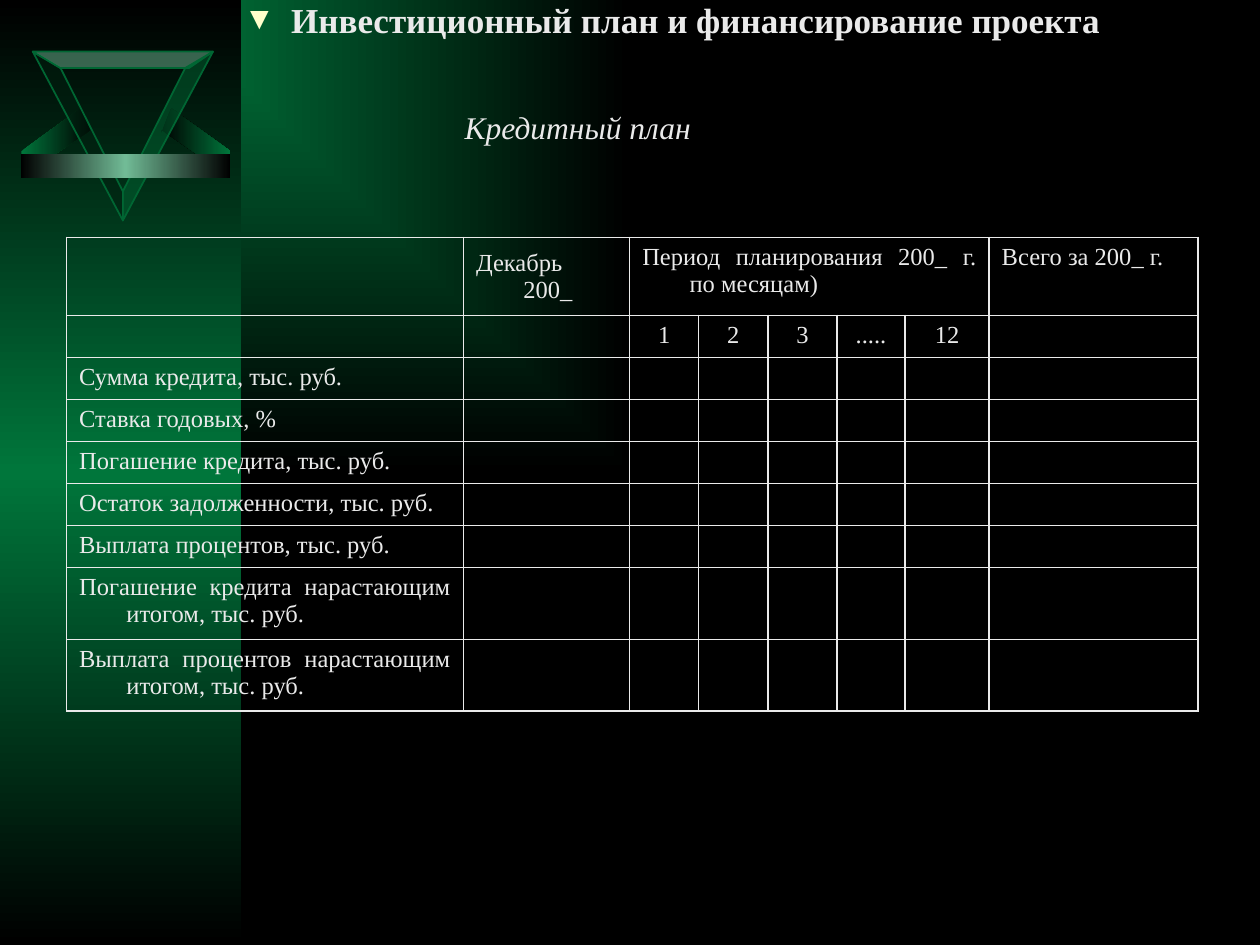
from lxml.etree import SubElement
from pptx import Presentation
from pptx.dml.color import RGBColor
from pptx.enum.shapes import MSO_SHAPE as Shape
from pptx.enum.text import MSO_ANCHOR as Anchor, MSO_AUTO_SIZE as AutoSize, PP_ALIGN as Align
from pptx.oxml.ns import qn
from pptx.util import Pt

COLORS = {
    "text": "EAEAEA", "bullet": "FFFFCC", "black": "000000", "green": "00763B",
    "edge": "006633", "deep": "002010", "mint": "71BB96",
}
HANGING = 27


def rgb(name):
    return RGBColor.from_string(COLORS[name])


def add_xml(parent, tag, **attributes):
    return SubElement(parent, qn(tag), attributes)


def mirror(points, axis):
    return [(2 * axis - x, y) for x, y in points]


class Deck:
    font_name = "Times New Roman"

    def __init__(self, width, height):
        self.deck = Presentation()
        self.deck.slide_width, self.deck.slide_height = Pt(width), Pt(height)
        self.slide = self.deck.slides.add_slide(self.deck.slide_layouts[1])
        heading = self.slide.shapes.title
        heading.element.getparent().remove(heading.element)

    def gradient(self, properties, stops, angle=None):
        solid = properties.find(qn("a:solidFill"))
        grad = add_xml(properties, "a:gradFill", rotWithShape="1")
        properties.replace(solid, grad)
        stop_list = add_xml(grad, "a:gsLst")
        for index, name in enumerate(stops):
            position = index * 100000 // (len(stops) - 1)
            stop = add_xml(stop_list, "a:gs", pos=str(position))
            add_xml(stop, "a:srgbClr", val=COLORS[name])
        if angle is None:
            corner = add_xml(grad, "a:path", path="rect")
            add_xml(corner, "a:fillToRect", r="100000", b="100000")
        else:
            add_xml(grad, "a:lin", ang=str(angle * 60000), scaled="0")

    def background(self, stops):
        self.slide.background.fill.solid()
        self.gradient(self.slide.element.find(".//" + qn("p:bgPr")), stops)

    def group(self):
        return self.slide.shapes.add_group_shape().shapes

    def band(self, shapes, box, stops, angle):
        band = shapes.add_shape(Shape.RECTANGLE, *map(Pt, box))
        band.shadow.inherit = False
        band.line.fill.background()
        band.fill.solid()
        self.gradient(band.element.spPr, stops, angle)

    def outline(self, shapes, points):
        start, *others = [(Pt(x), Pt(y)) for x, y in points]
        builder = shapes.build_freeform(*start)
        builder.add_line_segments(others)
        form = builder.convert_to_shape()
        form.shadow.inherit = False
        form.fill.solid()
        return form

    def wing(self, shapes, points, stops):
        form = self.outline(shapes, points)
        form.line.fill.background()
        self.gradient(form.element.spPr, stops, 0)

    def facet(self, shapes, points, color):
        form = self.outline(shapes, points)
        form.fill.fore_color.rgb = rgb(color)
        add_xml(form.element.spPr.find(qn("a:solidFill"))[0], "a:alpha", val="50000")
        form.line.color.rgb = rgb("edge")
        form.line.width = Pt(1)

    def style(self, paragraph, size, bold=False, italic=False):
        for run in paragraph.runs:
            font = run.font
            font.name, font.size = self.font_name, Pt(size)
            font.bold, font.italic = bold, italic
            font.color.rgb = rgb("text")

    def hang(self, paragraph):
        properties = paragraph._p.get_or_add_pPr()
        properties.set("marL", str(Pt(HANGING)))
        properties.set("indent", str(Pt(-HANGING)))
        return properties

    def heading(self, text, box):
        body = self.slide.placeholders[1]
        self.slide.shapes._spTree.append(body.element)
        body.left, body.top, body.width, body.height = map(Pt, box)
        frame = body.text_frame
        frame.text = text
        frame.auto_size = AutoSize.NONE
        paragraph = frame.paragraphs[0]
        properties = self.hang(paragraph)
        bullet_color = add_xml(properties, "a:buClr")
        add_xml(bullet_color, "a:srgbClr", val=COLORS["bullet"])
        add_xml(properties, "a:buSzPct", val="90000")
        add_xml(properties, "a:buFont", typeface=self.font_name)
        add_xml(properties, "a:buChar", char="▼")
        paragraph.alignment = Align.CENTER
        paragraph.line_spacing = 0.8
        paragraph.space_before = Pt(0)
        self.style(paragraph, 20, bold=True)

    def caption(self, text, box):
        frame = self.slide.shapes.add_textbox(*map(Pt, box)).text_frame
        frame.text = text
        frame.word_wrap = False
        frame.vertical_anchor = Anchor.MIDDLE
        self.style(frame.paragraphs[0], 18, italic=True)

    def cell(self, cell, text, alignment):
        cell.text = text
        paragraph = cell.text_frame.paragraphs[0]
        if text:
            self.hang(paragraph)
            paragraph.alignment = alignment
            self.style(paragraph, 14)
        else:
            paragraph._p.get_or_add_endParaRPr().set("sz", "1400")
        properties = cell._tc.get_or_add_tcPr()
        for side in ("L", "R", "T", "B"):
            border = add_xml(properties, f"a:ln{side}", w=str(Pt(1)))
            add_xml(add_xml(border, "a:solidFill"), "a:srgbClr", val=COLORS["text"])
        cell.fill.background()

    def table(self, rows, left, top, widths, heights):
        frame = self.slide.shapes.add_table(
            len(heights), len(widths), Pt(left), Pt(top), Pt(sum(widths)), Pt(sum(heights)))
        table = frame.table
        table.first_row = table.horz_banding = False
        for column, width in zip(table.columns, widths):
            column.width = Pt(width)
        for row, height in zip(table.rows, heights):
            row.height = Pt(height)
        for r, texts in enumerate(rows):
            alignment = Align.CENTER if r == 1 else Align.JUSTIFY
            for c in range(len(widths)):
                self.cell(table.cell(r, c), texts[c] if c < len(texts) else "", alignment)
        return table


def main():
    deck = Deck(720, 540)
    deck.background(["green", "black"])
    deck.band(deck.slide.shapes, (0, 0, 138, 540), ["black", "green", "black"], 90)

    emblem = deck.group()
    wing = [(12.2, 86.4), (12.2, 101.5), (51.8, 74.2), (51.8, 75.6), (46.1, 61.9), (12.2, 86.4)]
    facet = [(70.2, 126), (70.2, 109.4), (34.6, 38.9), (18.7, 29.5), (70.2, 126)]
    rim = [(18.7, 29.5), (34.6, 38.9), (108, 38.9), (121.7, 29.5), (18.7, 29.5)]
    deck.wing(emblem, mirror(wing, 72), ["black", "green"])
    deck.wing(emblem, wing, ["green", "black"])
    deck.facet(emblem, facet, "deep")
    deck.facet(emblem, rim, "mint")
    deck.facet(emblem, mirror(facet, 70.2), "edge")
    deck.band(emblem, (12, 88, 119.5, 13.7), ["black", "mint", "black"], 0)

    deck.heading("Инвестиционный план и финансирование проекта", (130.3, 0, 507.6, 26.6))
    deck.caption("Кредитный план", (258.5, 58.3, 148.3, 28.8))

    credit_rows = [
        ["", "Декабрь 200_", "Период планирования 200_ г. по месяцам)",
         "", "", "", "", "Всего за 200_ г."],
        ["", "", "1", "2", "3", ".....", "12"],
        ["Сумма кредита, тыс. руб."],
        ["Ставка годовых, %"],
        ["Погашение кредита, тыс. руб."],
        ["Остаток задолженности, тыс. руб."],
        ["Выплата процентов, тыс. руб."],
        ["Погашение кредита нарастающим итогом, тыс. руб."],
        ["Выплата процентов нарастающим итогом, тыс. руб."],
    ]
    credit_plan = deck.table(
        credit_rows, 38, 135.7,
        widths=[226.8, 95, 39.5, 39.5, 39.5, 39, 48, 119.5],
        heights=[44.5] + [24] * 6 + [41] * 2)
    credit_plan.cell(0, 2).merge(credit_plan.cell(0, 6))
    credit_plan.cell(0, 1).vertical_anchor = Anchor.MIDDLE

    deck.deck.save("out.pptx")


if __name__ == "__main__":
    main()
